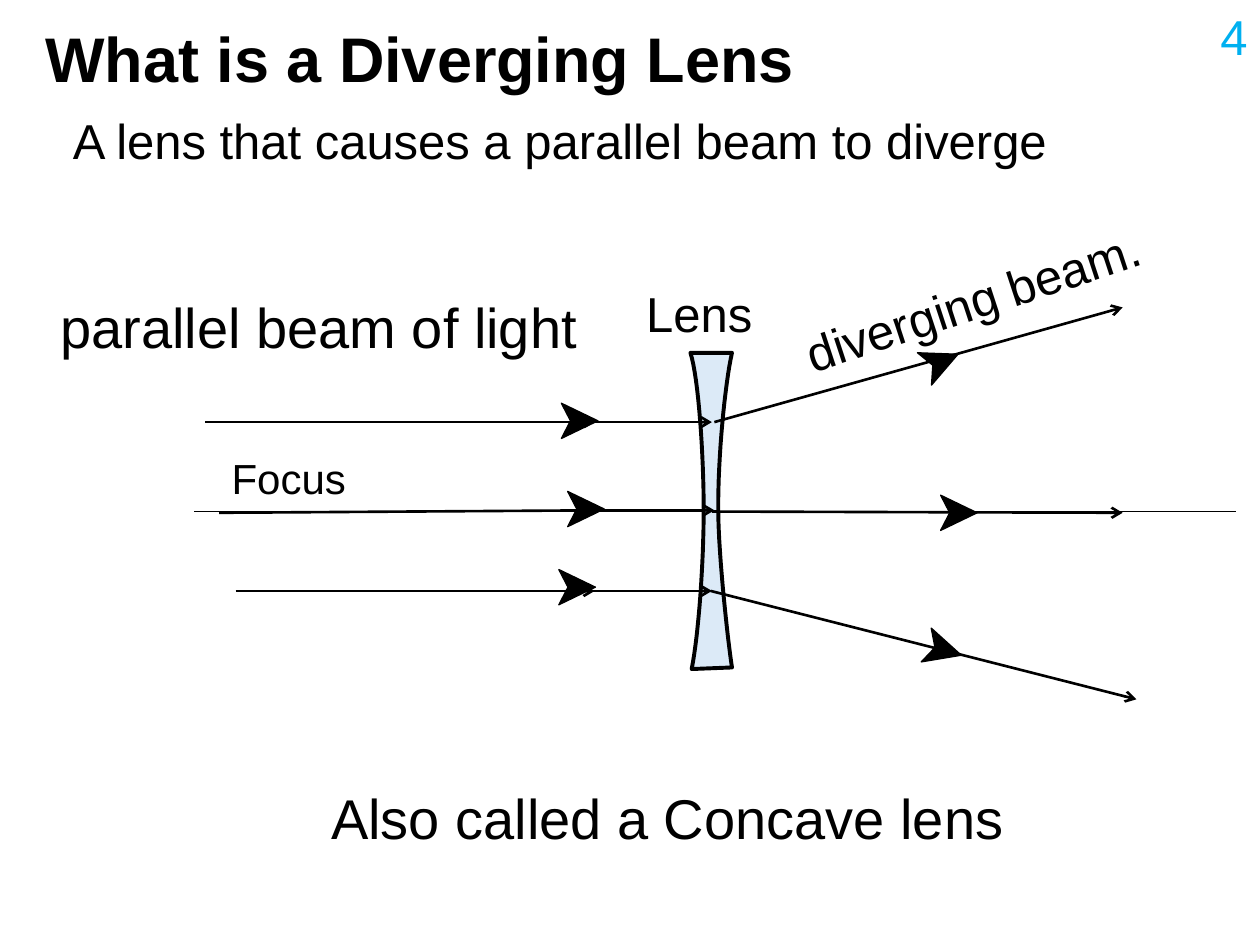
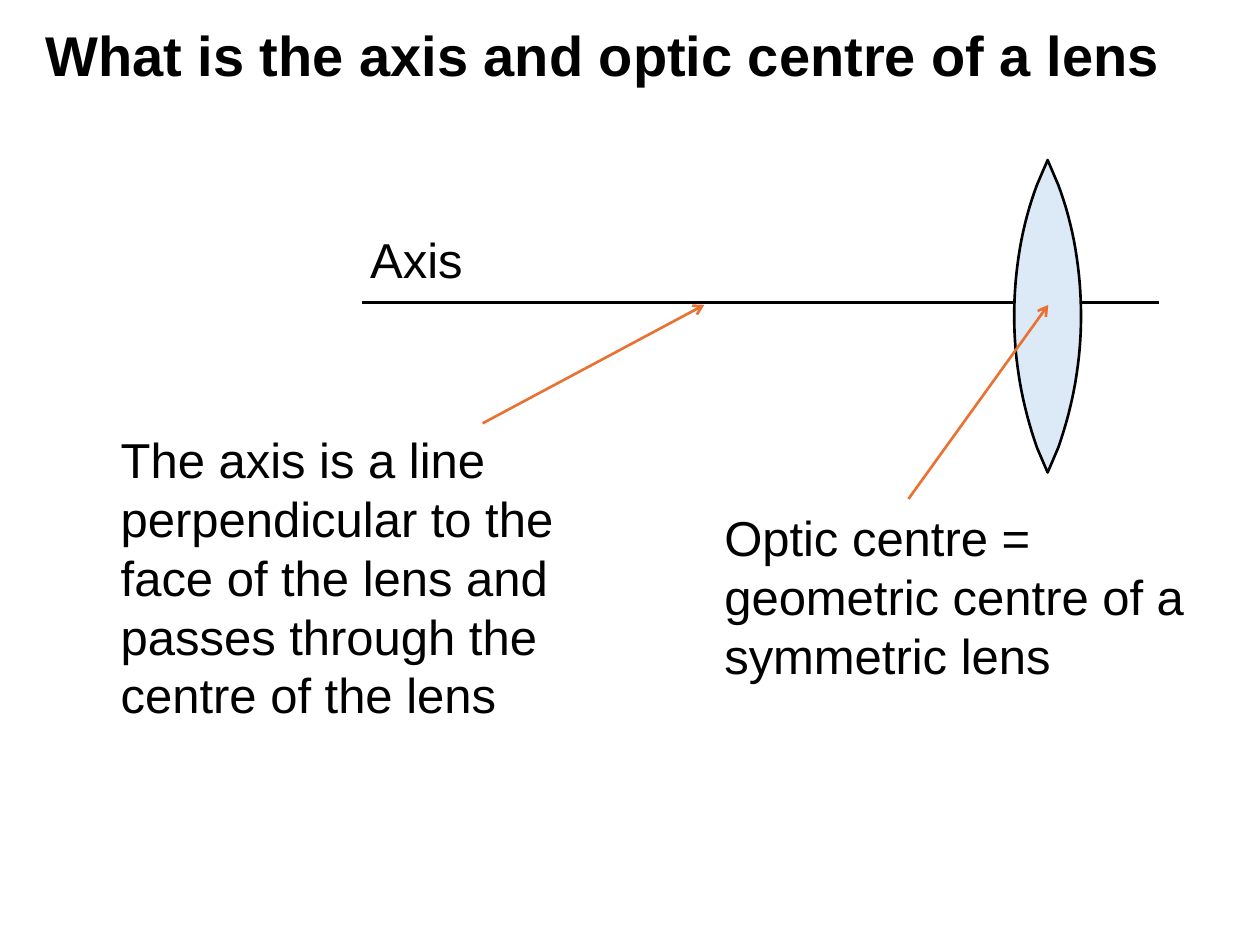
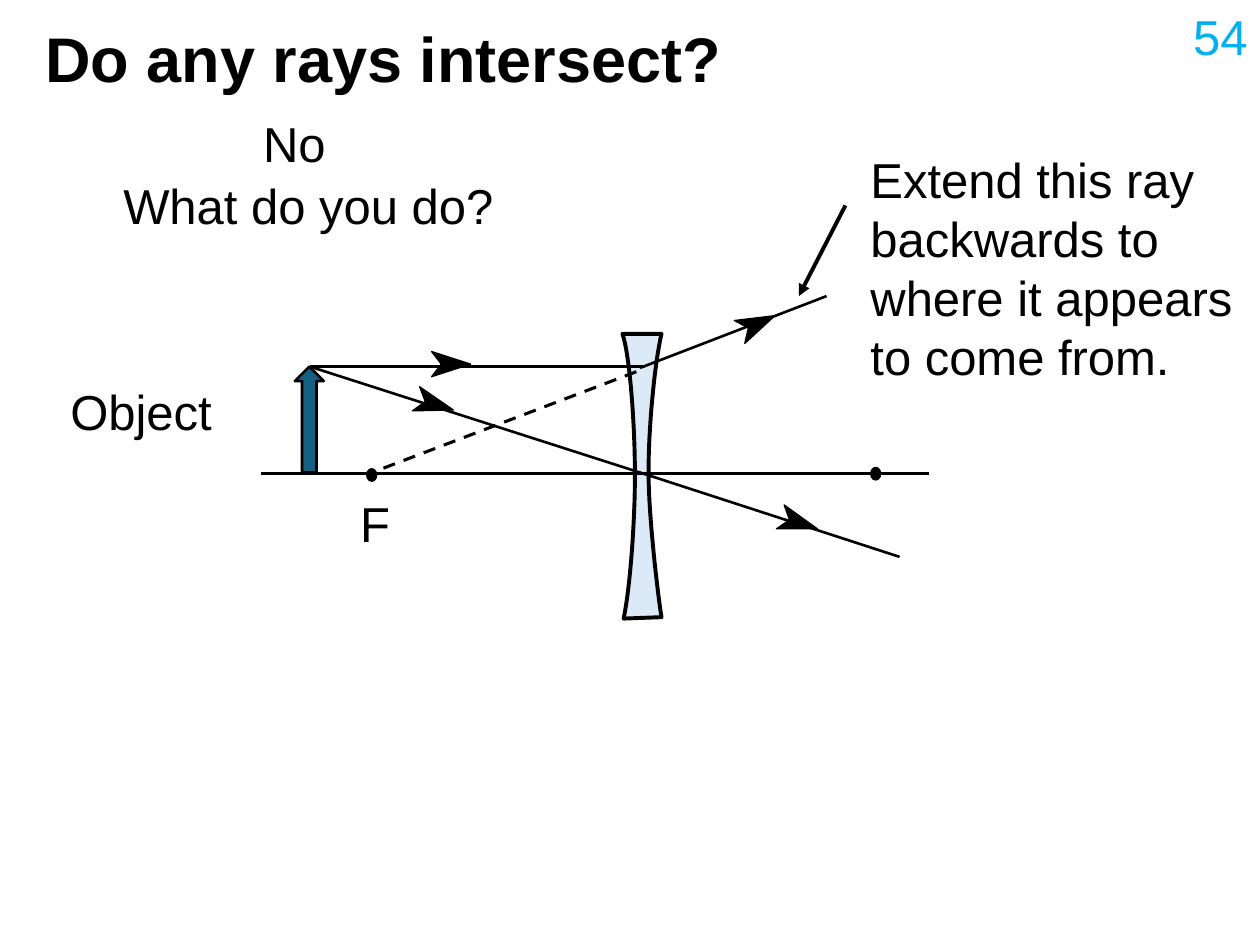
from pptx import Presentation
from pptx.dml.color import RGBColor
from pptx.enum.dml import MSO_LINE
from pptx.enum.shapes import MSO_CONNECTOR, MSO_SHAPE
from pptx.enum.text import MSO_ANCHOR, MSO_AUTO_SIZE, PP_ALIGN
from pptx.oxml.ns import qn
from pptx.util import Inches, Pt
from lxml import etree

FONT = "Arial"
BLACK = RGBColor(0x00, 0x00, 0x00)
NUMBER_BLUE = RGBColor(0x00, 0xB0, 0xF0)
LENS_BLUE = RGBColor(0xDC, 0xEA, 0xF7)
OBJECT_BLUE = RGBColor(0x15, 0x60, 0x82)
POINTER_ORANGE = RGBColor(0xE9, 0x71, 0x32)

TITLE_BOX = (0.26, 0.17, 9.54, 0.65)
NUMBER_BOX = (7.67, 0, 2.33, 0.52)
OPEN = {"tail": "arrow"}
POINTER = {"tail": "arrow", "color": POINTER_ORANGE}
FIT = {"wrap": False}

# Lens outlines as fractions of their box: two numbers are a corner,
# six are a Bezier curve (two control points and the end)
CONCAVE = [
    (0, 0), (1, 0),
    (0.83, 0.1, 0.66, 0.33, 0.67, 0.495), (0.67, 0.64, 0.91, 0.92, 1, 0.995),
    (0.03, 1),
    (0.2, 0.89, 0.32, 0.66, 0.32, 0.495), (0.32, 0.33, 0.2, 0.08, 0, 0),
]
CONVEX = [
    (0.5, 0), (0.66, 0.08),
    (0.89, 0.21, 1, 0.355, 1, 0.5), (1, 0.64, 0.89, 0.78, 0.66, 0.92),
    (0.5, 1), (0.34, 0.92),
    (0.11, 0.78, 0, 0.64, 0, 0.5), (0, 0.355, 0.11, 0.21, 0.34, 0.08),
]

# Content. Lines: (x1, y1, x2, y2, options); heads: (centre x, centre y, angle);
# labels: (text, box, size, options)
SLIDES = [
    {
        "title": ("What is a Diverging Lens", 36),
        "number": "4",
        "behind": [(1.54, 4.06, 9.81, 4.06, {"width": 1})],
        "lens": (CONCAVE, (5.48, 2.8, 0.33, 2.51), 2.25),
        "lines": [
            (1.63, 3.35, 4.72, 3.35, OPEN), (4.55, 3.35, 5.65, 3.35, OPEN),
            (1.74, 4.07, 4.74, 4.05, OPEN), (4.57, 4.05, 5.67, 4.05, OPEN),
            (1.87, 4.69, 4.72, 4.69, OPEN), (4.55, 4.69, 5.65, 4.69, OPEN),
            (5.67, 3.35, 8.91, 2.44, OPEN),
            (5.65, 4.06, 8.91, 4.07, OPEN),
            (5.64, 4.69, 9.02, 5.55, OPEN),
        ],
        "head_size": (0.29, 0.28),
        "heads": [
            (4.6, 3.34, 0), (4.65, 4.04, 0), (4.58, 4.66, 0),
            (7.47, 2.87, -23.6), (7.61, 4.07, 0), (7.49, 5.16, 16.4),
        ],
        "labels": [
            ("Focus", (1.74, 3.54, 1.24, 0.5), 24, {}),
            ("Lens", (5.03, 2.2, 1.23, 0.57), 28, FIT),
            ("parallel beam of light", (0.38, 2.27, 4.55, 0.64), 32, {}),
            ("diverging beam.", (6.23, 2.03, 3.42, 0.57), 28, {"rotation": -18.2}),
            ("Also called a Concave lens", (2.53, 6.17, 6.23, 0.64), 32, {}),
            ("A lens that causes a parallel beam to diverge",
             (0.48, 0.83, 8.03, 0.57), 28, FIT),
        ],
    },
    {
        "title": ("What is the axis and optic centre of a lens", 32),
        "behind": [(3.83, 3.36, 5.59, 2.42, POINTER), (9.2, 2.4, 2.87, 2.4, {})],
        "lens": (CONVEX, (8.05, 1.27, 0.53, 2.48), 1.5),
        "lines": [(7.21, 3.96, 8.32, 2.42, POINTER)],
        "labels": [
            ("The axis is a line perpendicular to the face of the lens and "
             "passes through the centre of the lens", (0.86, 3.36, 4.35, 2.46), 28, {}),
            ("Axis", (2.84, 1.77, 0.94, 0.57), 28, FIT),
            ("Optic centre = geometric centre of a symmetric lens",
             (5.65, 3.98, 4.35, 1.51), 28, {}),
        ],
    },
    {
        "title": ("Do any rays intersect?", 36),
        "number": "54",
        "lens": (CONCAVE, (4.94, 2.65, 0.31, 2.26), 2.25),
        "lines": [
            (2.07, 3.76, 7.37, 3.76, {}),
            (2.46, 2.91, 5.12, 2.91, {}),
            (5.08, 2.92, 6.56, 2.35, {}),
            (5.05, 2.95, 2.98, 3.74, {"width": 1.75, "dash": MSO_LINE.DASH}),
            (5.14, 3.77, 7.14, 4.42, {}),
            (2.46, 2.91, 5.14, 3.77, {}),
            (6.71, 1.63, 6.34, 2.35, {"width": 2.25, "tail": "triangle"}),
        ],
        "presets": [
            (MSO_SHAPE.OVAL, (6.91, 3.71, 0.08, 0.1), BLACK, 0.75),
            (MSO_SHAPE.OVAL, (2.91, 3.72, 0.08, 0.1), BLACK, 0.75),
            (MSO_SHAPE.UP_ARROW, (2.34, 2.91, 0.23, 0.84), OBJECT_BLUE, 1.5),
        ],
        "head_size": (0.31, 0.2),
        "heads": [
            (3.58, 2.89, 0), (6.01, 2.57, -24.7),
            (6.34, 4.15, 17.9), (3.45, 3.21, 16.7),
        ],
        "labels": [
            ("Object", (0.46, 2.98, 1.48, 0.57), 28, {}),
            ("No", (1.99, 0.85, 0.71, 0.57), 28, FIT),
            ("What do you do?", (0.88, 1.34, 3.18, 0.57), 28, FIT),
            ("F", (2.76, 3.87, 0.44, 0.57), 28, FIT),
            ("Extend this ray backwards to where it appears to come from.",
             (6.81, 1.14, 3.19, 1.99), 28, {}),
        ],
    },
]


def inches(values):
    return [Inches(value) for value in values]


def write(shape, text, size, color=BLACK, bold=False, align=PP_ALIGN.LEFT,
          wrap=True, auto_size=MSO_AUTO_SIZE.SHAPE_TO_FIT_TEXT):
    frame = shape.text_frame
    frame.text = text
    settings = {"word_wrap": wrap, "auto_size": auto_size,
                "vertical_anchor": MSO_ANCHOR.TOP}
    for name, value in settings.items():
        setattr(frame, name, value)
    paragraph = frame.paragraphs[0]
    paragraph.alignment = align
    font = paragraph.runs[0].font
    for name, value in {"name": FONT, "size": Pt(size), "bold": bold}.items():
        setattr(font, name, value)
    font.color.rgb = color
    return paragraph


def add_title(slide, text, size):
    title = slide.shapes.title
    for name, value in zip(("left", "top", "width", "height"), inches(TITLE_BOX)):
        setattr(title, name, value)
    paragraph = write(title, text, size, bold=True, auto_size=MSO_AUTO_SIZE.NONE)
    paragraph.line_spacing = 0.9


def add_label(slide, text, box, size, rotation=0, **options):
    label = slide.shapes.add_textbox(*inches(box))
    write(label, text, size, **options)
    label.rotation = rotation


def add_line(slide, x1, y1, x2, y2, width=1.5, color=BLACK, dash=None, tail=None):
    connector = slide.shapes.add_connector(
        MSO_CONNECTOR.STRAIGHT, *inches((x1, y1, x2, y2)))
    line = connector.line
    line.color.rgb = color
    line.width = Pt(width)
    if dash:
        line.dash_style = dash
    if tail:
        etree.SubElement(line._get_or_add_ln(), qn("a:tailEnd"), type=tail)
    etree.SubElement(connector._element.spPr, qn("a:effectLst"))


def paint(shape, fill, width):
    shape.shadow.inherit = False
    shape.fill.solid()
    shape.fill.fore_color.rgb = fill
    shape.line.color.rgb = BLACK
    shape.line.width = Pt(width)


def add_outline(slide, points, fill, width):
    start, *rest = [inches(point) for point in points]
    builder = slide.shapes.build_freeform(*start, scale=1.0)
    builder.add_line_segments(rest, close=True)
    shape = builder.convert_to_shape()
    paint(shape, fill, width)
    return shape


def flatten(outline, steps=16):
    """Turn the corners and curves of an outline into points."""
    points = []
    for part in outline:
        if len(part) == 2:
            points.append(part)
            continue
        nodes = [points[-1], part[:2], part[2:4], part[4:]]
        for step in range(1, steps + 1):
            t = step / steps
            weights = ((1 - t) ** 3, 3 * t * (1 - t) ** 2, 3 * t * t * (1 - t), t ** 3)
            points.append(tuple(
                sum(weight * node[axis] for weight, node in zip(weights, nodes))
                for axis in (0, 1)))
    return points


def add_lens(slide, outline, box, width):
    left, top, wide, high = box
    points = [(left + x * wide, top + y * high) for x, y in flatten(outline)]
    add_outline(slide, points, LENS_BLUE, width)


def add_head(slide, x, y, angle, size):
    """Draw a notched ray marker that points right, then turn it."""
    length, width = size
    back, notch = x - length / 2, x - length / 4
    points = [(back, y - width / 2), (x + length / 2, y),
              (back, y + width / 2), (notch, y)]
    add_outline(slide, points, BLACK, 0.75).rotation = angle


def build_slide(deck, content):
    slide = deck.slides.add_slide(deck.slide_layouts[5])
    add_title(slide, *content["title"])
    if "number" in content:
        add_label(slide, content["number"], NUMBER_BOX, 28, color=NUMBER_BLUE,
                  align=PP_ALIGN.RIGHT, auto_size=MSO_AUTO_SIZE.NONE)

    # Diagram, from back to front
    for *ends, options in content.get("behind", []):
        add_line(slide, *ends, **options)
    add_lens(slide, *content["lens"])
    for *ends, options in content["lines"]:
        add_line(slide, *ends, **options)
    for preset, box, fill, width in content.get("presets", []):
        paint(slide.shapes.add_shape(preset, *inches(box)), fill, width)
    for head in content.get("heads", []):
        add_head(slide, *head, content["head_size"])
    for text, box, size, options in content["labels"]:
        add_label(slide, text, box, size, **options)


def main():
    deck = Presentation()
    deck.slide_width, deck.slide_height = Inches(10), Inches(7.5)
    for content in SLIDES:
        build_slide(deck, content)
    deck.save("out.pptx")


if __name__ == "__main__":
    main()
